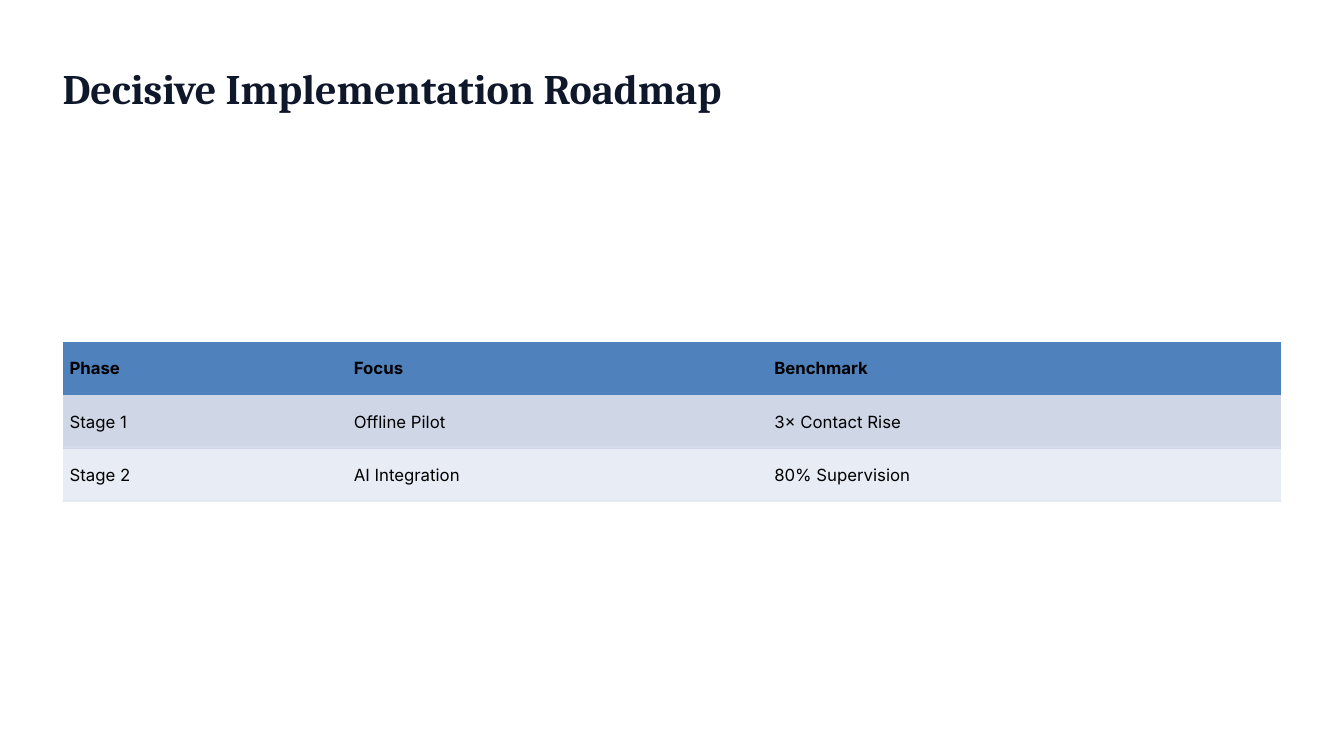
from pptx import Presentation
from pptx.dml.color import RGBColor
from pptx.enum import shapes, text
from pptx.oxml.ns import qn
from pptx.util import Inches, Pt

INK = RGBColor(0x0F, 0x17, 0x2A)
BLACK = RGBColor(0, 0, 0)
RULE = RGBColor(0xE2, 0xE8, 0xF0)
FILLS = [
    RGBColor(0x4F, 0x81, 0xBD),
    RGBColor(0xCF, 0xD7, 0xE7),
    RGBColor(0xE8, 0xEC, 0xF4),
]
PLAIN = "{2D5ABB26-0587-4C30-8999-92F81FD0307C}"  # no style, no grid

ROWS = [
    ["Phase", "Focus", "Benchmark"],
    ["Stage 1", "Offline Pilot", "3× Contact Rise"],
    ["Stage 2", "AI Integration", "80% Supervision"],
]
WIDTHS = [2.82, 4.17, 5.1]
LEFT, TOP, HEIGHT = 0.62, 3.39, 0.53


def style(par, name, size, color, bold):
    font = par.font
    font.name, font.size, font.bold = name, Pt(size), bold
    font.color.rgb = color


prs = Presentation()
prs.slide_width, prs.slide_height = Inches(13.33), Inches(7.5)
slide = prs.slides.add_slide(prs.slide_layouts[6])

# Title
box = slide.shapes.add_textbox(Inches(LEFT), Inches(0.62), Inches(12.69), Inches(0.55))
frame = box.text_frame
frame.word_wrap = True
frame.auto_size = text.MSO_AUTO_SIZE.SHAPE_TO_FIT_TEXT
frame.margin_left = frame.margin_right = frame.margin_top = frame.margin_bottom = 0
frame.text = "Decisive Implementation Roadmap"
style(frame.paragraphs[0], "Cambria", 30, INK, True)

# Roadmap table
table = slide.shapes.add_table(
    len(ROWS), len(WIDTHS), Inches(LEFT), Inches(TOP),
    Inches(sum(WIDTHS)), Inches(HEIGHT * len(ROWS))).table
table._tbl.tblPr.find(qn("a:tableStyleId")).text = PLAIN
for col, width in zip(table.columns, WIDTHS):
    col.width = Inches(width)
for r, (row, fill) in enumerate(zip(ROWS, FILLS)):
    table.rows[r].height = Inches(HEIGHT)
    for c, label in enumerate(row):
        cell = table.cell(r, c)
        cell.text = label
        cell.vertical_anchor = text.MSO_ANCHOR.MIDDLE
        cell.margin_left = cell.margin_right = Inches(0.07)
        cell.margin_top = cell.margin_bottom = Inches(0.03)
        cell.fill.solid()
        cell.fill.fore_color.rgb = fill
        style(cell.text_frame.paragraphs[0], "Inter", 12, BLACK, r == 0)

# Thin rules under the body rows, one per column
for r in range(1, len(ROWS)):
    y = TOP + HEIGHT * (r + 1) - 0.02
    for c, width in enumerate(WIDTHS):
        x = LEFT + sum(WIDTHS[:c])
        rule = slide.shapes.add_shape(
            shapes.MSO_SHAPE.RECTANGLE, Inches(x), Inches(y), Inches(width), Inches(0.01))
        rule.shadow.inherit = False
        rule.fill.solid()
        rule.fill.fore_color.rgb = RULE
        rule.line.fill.background()

prs.save("out.pptx")
